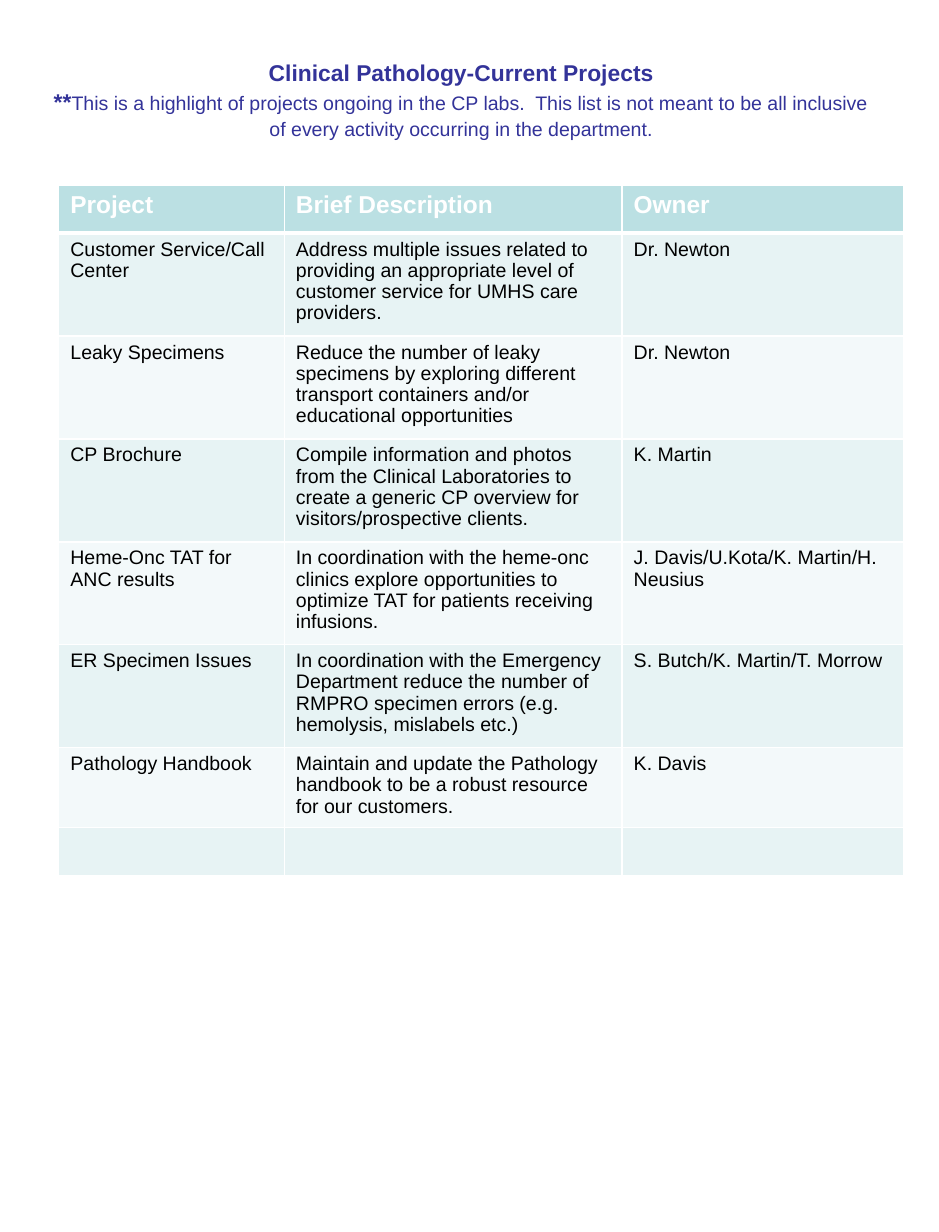
"""Build the list of current clinical pathology projects."""
from lxml.etree import SubElement
from pptx import Presentation
from pptx.dml.color import RGBColor
from pptx.enum.text import PP_ALIGN
from pptx.oxml.ns import qn
from pptx.util import Cm, Pt


def style(font, size, color, bold=False):
    font.name = "Arial"
    font.size = Pt(size)
    font.bold = bold
    font.color.rgb = RGBColor.from_string(color)


def edge(cell, side, width):
    line = SubElement(cell._tc.get_or_add_tcPr(), qn("a:ln" + side), w=str(Pt(width)))
    fill = SubElement(line, qn("a:solidFill"))
    SubElement(fill, qn("a:srgbClr"), val="FFFFFF")


deck = Presentation()
deck.slide_width, deck.slide_height = Cm(20.32), Cm(26.67)
slide = deck.slides.add_slide(deck.slide_layouts[6])

title = slide.shapes.add_textbox(Cm(0.84), Cm(1.09), Cm(18.29), Cm(1.88))
frame = title.text_frame
frame.word_wrap = True
frame.margin_left = frame.margin_right = Cm(0.28)
head = frame.paragraphs[0]
head.text = "Clinical Pathology-Current Projects"
style(head.font, 14, "333399", True)
note = frame.add_paragraph()
for text, size, bold in [
    ("**", 14, True),
    ("This is a highlight of projects ongoing in the CP labs.  This list is not meant "
     "to be all inclusive of every activity occurring in the department.", 12, False),
]:
    run = note.add_run()
    run.text = text
    style(run.font, size, "333399", bold)
for para in frame.paragraphs:
    para.alignment = PP_ALIGN.CENTER
    para.line_spacing = 1.08

rows = [
    ("Project", "Brief Description", "Owner"),
    ("Customer Service/Call Center",
     "Address multiple issues related to providing an appropriate level of "
     "customer service for UMHS care providers.", "Dr. Newton"),
    ("Leaky Specimens",
     "Reduce the number of leaky specimens by exploring different transport "
     "containers and/or educational opportunities", "Dr. Newton"),
    ("CP Brochure",
     "Compile information and photos from the Clinical Laboratories to create a "
     "generic CP overview for visitors/prospective clients.", "K. Martin"),
    ("Heme-Onc TAT for ANC results",
     "In coordination with the heme-onc clinics explore opportunities to optimize "
     "TAT for patients receiving infusions.", "J. Davis/U.Kota/K. Martin/H. Neusius"),
    ("ER Specimen Issues",
     "In coordination with the Emergency Department reduce the number of RMPRO "
     "specimen errors (e.g. hemolysis, mislabels etc.)", "S. Butch/K. Martin/T. Morrow"),
    ("Pathology Handbook",
     "Maintain and update the Pathology handbook to be a robust resource for our "
     "customers.", "K. Davis"),
    ("", "", ""),
]
highs = [1.04] + [2.15] * 5 + [1.68, 1.04]
wides = [4.88, 7.31, 6.1]

table = slide.shapes.add_table(
    len(rows), len(wides), Cm(1.27), Cm(4.01), Cm(sum(wides)), Cm(sum(highs))).table
for col, wide in zip(table.columns, wides):
    col.width = Cm(wide)
for i, (row, high) in enumerate(zip(rows, highs)):
    table.rows[i].height = Cm(high)
    for j, text in enumerate(row):
        cell = table.cell(i, j)
        for side in "LRTB":
            thick = (i == 0 and side == "B") or (i == 1 and side == "T")
            edge(cell, side, 3 if thick else 1)
        cell.fill.solid()
        shade = "BBE0E3" if i == 0 else "E7F3F4" if i % 2 else "F3F9FA"
        cell.fill.fore_color.rgb = RGBColor.from_string(shade)
        para = cell.text_frame.paragraphs[0]
        para.text = text
        if i == 0:
            style(para.font, 15, "FFFFFF", True)
        else:
            para.line_spacing = 0.97
            style(para.font, 12, "000000")

deck.save("out.pptx")
